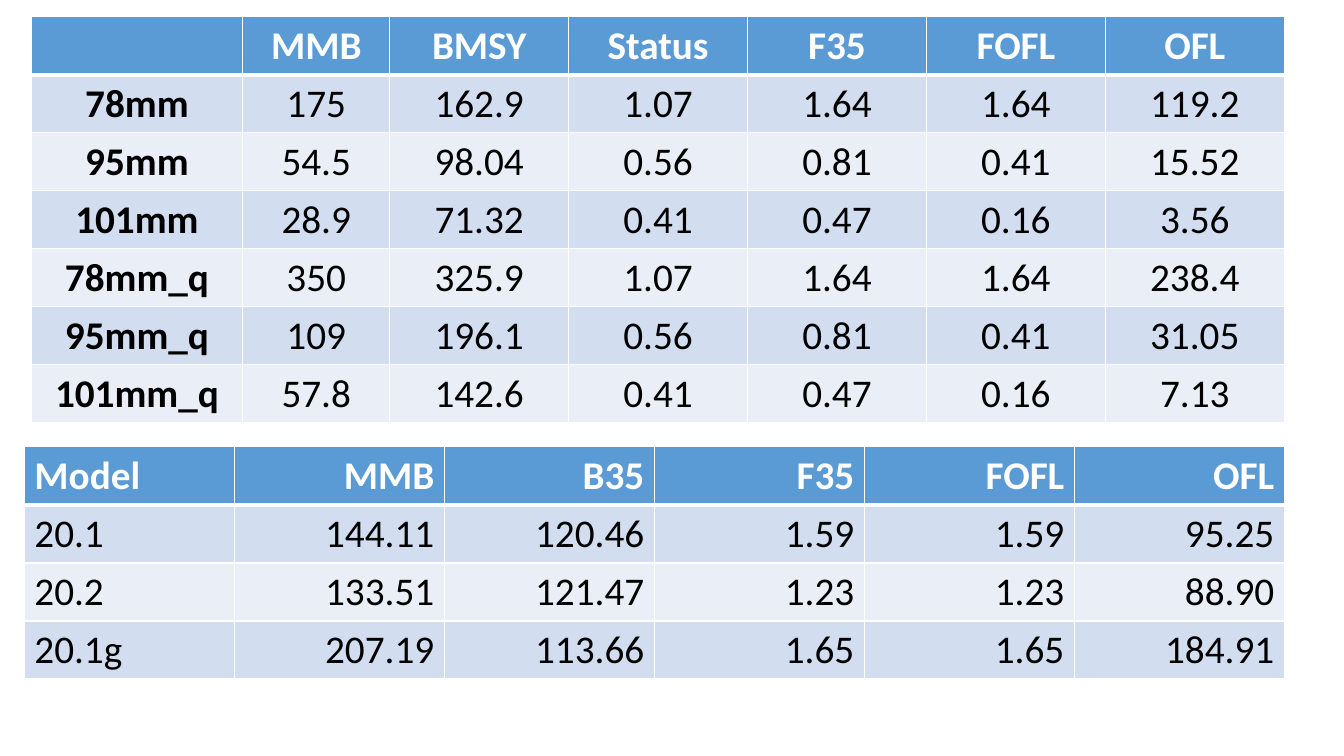
from lxml import etree
from pptx import Presentation
from pptx.dml.color import RGBColor
from pptx.enum.text import PP_ALIGN
from pptx.oxml.ns import qn
from pptx.util import Inches, Pt

LEFT, CENTER, RIGHT = PP_ALIGN.LEFT, PP_ALIGN.CENTER, PP_ALIGN.RIGHT

WHITE = RGBColor(0xFF, 0xFF, 0xFF)
BLACK = RGBColor(0x00, 0x00, 0x00)
HEADER_BLUE = RGBColor(0x5B, 0x9B, 0xD5)
BANDS = RGBColor(0xD2, 0xDE, 0xEF), RGBColor(0xEA, 0xEF, 0xF7)

PAGE_WIDTH, PAGE_HEIGHT = Inches(13.33), Inches(7.5)
GRID_COLUMNS, GRID_ROWS = 160, 90
ROW_SPAN = 6.8
THIN, THICK = 1, 3

SIZE_LIMITS = [
    ["", "MMB", "BMSY", "Status", "F35", "FOFL", "OFL"],
    ["78mm", "175", "162.9", "1.07", "1.64", "1.64", "119.2"],
    ["95mm", "54.5", "98.04", "0.56", "0.81", "0.41", "15.52"],
    ["101mm", "28.9", "71.32", "0.41", "0.47", "0.16", "3.56"],
    ["78mm_q", "350", "325.9", "1.07", "1.64", "1.64", "238.4"],
    ["95mm_q", "109", "196.1", "0.56", "0.81", "0.41", "31.05"],
    ["101mm_q", "57.8", "142.6", "0.41", "0.47", "0.16", "7.13"],
]
MODELS = [
    ["Model", "MMB", "B35", "F35", "FOFL", "OFL"],
    ["20.1", "144.11", "120.46", "1.59", "1.59", "95.25"],
    ["20.2", "133.51", "121.47", "1.23", "1.23", "88.90"],
    ["20.1g", "207.19", "113.66", "1.65", "1.65", "184.91"],
]


def across(columns):
    return round(PAGE_WIDTH * columns / GRID_COLUMNS)


def down(rows):
    return round(PAGE_HEIGHT * rows / GRID_ROWS)


def write_text(cell, text, *, color, bold, align, size=28, font="Calibri"):
    para = cell.text_frame.paragraphs[0]
    para.alignment = align
    if text:
        span = para.add_run()
        span.text = text
        span.font.name = font
        span.font.size = Pt(size)
        span.font.bold = bold
        span.font.color.rgb = color


def set_borders(cell, **widths):
    properties = cell._tc.get_or_add_tcPr()
    for side in "LRTB":
        width = Pt(widths.get(side, THIN))
        line = etree.SubElement(properties, qn(f"a:ln{side}"), w=str(width))
        fill = etree.SubElement(line, qn("a:solidFill"))
        etree.SubElement(fill, qn("a:srgbClr"), val=str(WHITE))


def fill_cell(cell, color):
    cell.fill.solid()
    cell.fill.fore_color.rgb = color


def add_data_table(page, data, left, top, spans, first_align, align, bold_labels):
    frame = page.shapes.add_table(
        len(data), len(spans), across(left), down(top),
        across(sum(spans)), down(ROW_SPAN * len(data)))
    table = frame.table
    table.horz_banding = False
    for column, span in zip(table.columns, spans):
        column.width = across(span)
    for r, values in enumerate(data):
        table.rows[r].height = down(ROW_SPAN)
        header = r == 0
        for c, value in enumerate(values):
            cell = table.cell(r, c)
            set_borders(cell, B=THICK if header else THIN, T=THICK if r == 1 else THIN)
            fill_cell(cell, HEADER_BLUE if header else BANDS[(r - 1) % 2])
            write_text(cell, value,
                       color=WHITE if header else BLACK,
                       bold=header or (bold_labels and c == 0),
                       align=first_align if c == 0 else align)


def main():
    deck = Presentation()
    deck.slide_width, deck.slide_height = PAGE_WIDTH, PAGE_HEIGHT
    page = deck.slides.add_slide(deck.slide_layouts[6])
    add_data_table(page, SIZE_LIMITS, 3.7, 2, [25.2, 17.5] + [21.3] * 5,
                   CENTER, CENTER, bold_labels=True)
    add_data_table(page, MODELS, 2.9, 53.2, [25] * 6,
                   LEFT, RIGHT, bold_labels=False)
    deck.save("out.pptx")


if __name__ == "__main__":
    main()
